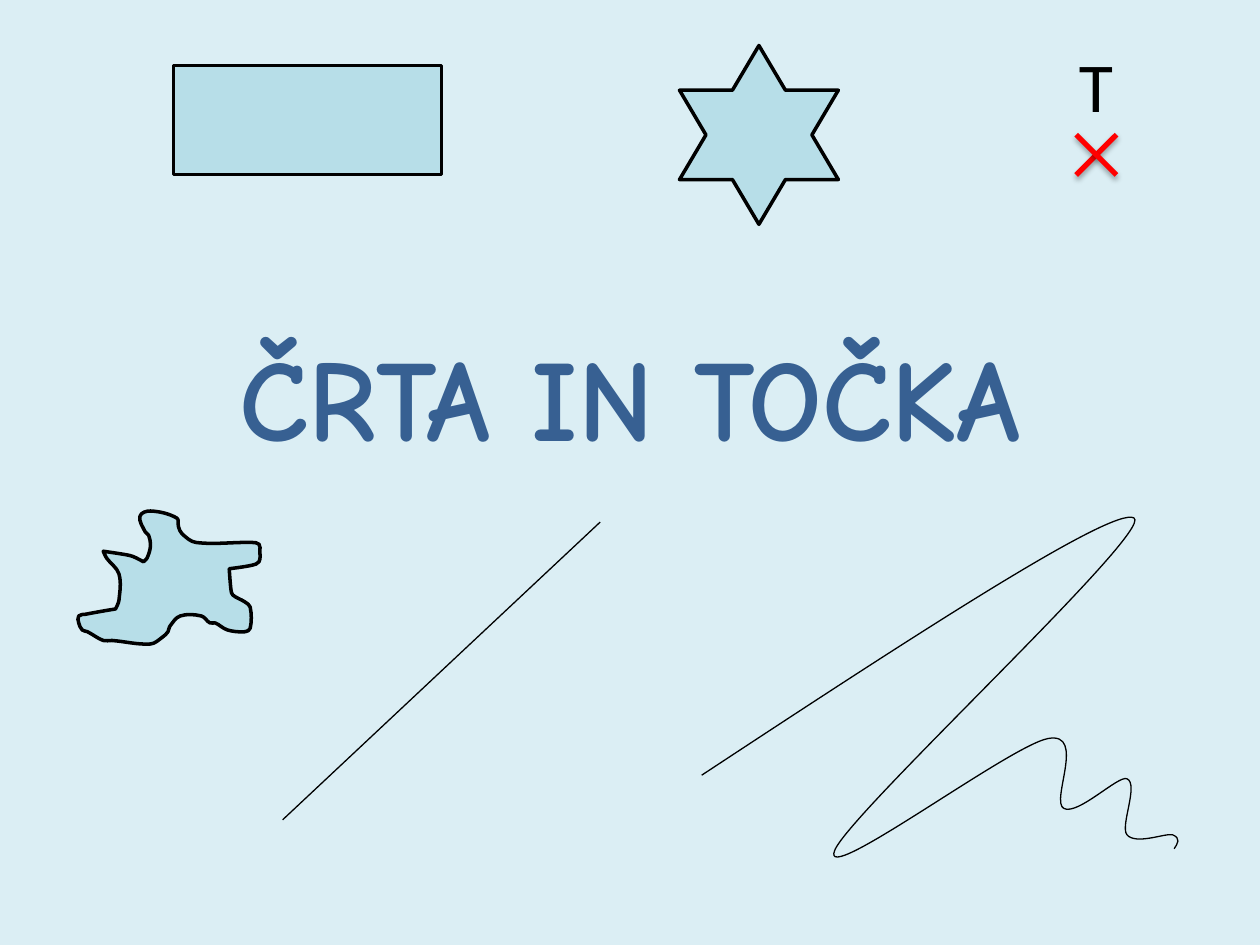
import math
from dataclasses import dataclass

import lxml.etree
import pptx
import pptx.dml.color
import pptx.enum.shapes
import pptx.enum.text
import pptx.oxml
import pptx.oxml.ns
import pptx.util

Pt = pptx.util.Pt
RGBColor = pptx.dml.color.RGBColor
Shapes = pptx.enum.shapes.MSO_SHAPE
Align = pptx.enum.text.PP_ALIGN
Anchor = pptx.enum.text.MSO_ANCHOR
AutoSize = pptx.enum.text.MSO_AUTO_SIZE
qn = pptx.oxml.ns.qn
Point = tuple[float, float]

PALE_BLUE = RGBColor(0xDB, 0xEE, 0xF4)
LIGHT_BLUE = RGBColor(0xB7, 0xDE, 0xE8)
TITLE_BLUE = RGBColor(0x37, 0x60, 0x92)
BLACK = RGBColor(0, 0, 0)
RED = RGBColor(0xFF, 0, 0)

NAMESPACE = 'xmlns:a="http://schemas.openxmlformats.org/drawingml/2006/main"'
NO_EFFECT = f"<a:effectLst {NAMESPACE}/>"
SOFT_SHADOW = (
    f'<a:effectLst {NAMESPACE}><a:outerShdw blurRad="{Pt(3.1)}" dist="{Pt(1.8)}" '
    'dir="5400000" rotWithShape="0"><a:srgbClr val="000000"><a:alpha val="35000"/>'
    "</a:srgbClr></a:outerShdw></a:effectLst>"
)


@dataclass
class Figure:
    kind: Shapes
    left: float
    top: float
    width: float
    height: float


@dataclass
class Line:
    start: Point
    end: Point
    color: RGBColor
    weight: float
    effect: str = NO_EFFECT


@dataclass
class Curve:
    """A start point, then two control points and an end point for each bend."""
    corner: Point
    opposite: Point
    controls: list[Point]
    weight: float
    fill: RGBColor | None = None


FIGURES = [
    Figure(Shapes.RECTANGLE, 99, 37.4, 153.2, 62.4),
    Figure(Shapes.STAR_6_POINT, 388.3, 26, 90.8, 102.2),
]
DIAGONAL = Line((161.5, 468.5), (343, 298.3), BLACK, 0.75)
CROSS = [
    Line((638, 77), (615, 100), RED, 3, SOFT_SHADOW),
    Line((615, 77), (638, 100), RED, 3, SOFT_SHADOW),
]
SQUIGGLE = Curve((401, 289), (674.7, 507.8), [
    (401, 443),
    (518, 366), (636, 289), (648, 296),
    (660, 303), (485, 465), (477, 486),
    (468, 508), (577, 426), (599, 422),
    (621, 418), (600, 458), (608, 462),
    (616, 466), (639, 443), (644, 445),
    (651, 448), (640, 472), (644, 477),
    (649, 483), (666, 476), (670, 477),
    (675, 479), (673, 482), (671, 485),
], 0.75)
BLOB_ANCHORS = [
    (83, 304), (80, 295), (86, 292), (101, 296), (102, 301), (104, 305),
    (112, 310), (144, 310), (148, 311), (148.5, 315), (148, 321), (144, 323),
    (131, 325), (132, 337), (133, 340), (140, 344), (143, 347), (143, 359),
    (140, 361), (130, 360), (123, 356), (120, 356), (115, 352), (103, 352),
    (97, 358), (96, 361), (93, 364), (86, 368), (64, 366), (59, 366),
    (50, 361), (47, 360), (45, 356), (45, 352), (49, 351), (60, 349),
    (66, 348), (68, 343), (68, 328), (61, 319), (59, 315), (72, 317),
    (76, 318), (82, 321), (84, 319), (86, 312), (85, 306),
]
BLOB_CORNERS = [(131, 325), (59, 315), (66, 348), (82, 321)]


def smooth_controls(anchors: list[Point], corners: list[Point]) -> list[Point]:
    """Return Bezier points for a closed curve, smooth except at the corners."""
    count = len(anchors)

    def handle(index: int, reach: float) -> Point:
        x, y = anchors[index]
        if anchors[index] in corners:
            return x, y
        before, after = anchors[index - 1], anchors[(index + 1) % count]
        scale = reach / math.dist(before, after)
        return x + (after[0] - before[0]) * scale, y + (after[1] - before[1]) * scale

    controls = [anchors[0]]
    for index, anchor in enumerate(anchors):
        following = (index + 1) % count
        reach = math.dist(anchor, anchors[following]) / 3
        controls += [handle(index, reach), handle(following, -reach), anchors[following]]
    return controls


def draw_curve(page, curve: Curve) -> None:
    left, top = curve.corner
    builder = page.shapes.build_freeform(Pt(left), Pt(top))
    builder.add_line_segments([tuple(map(Pt, curve.opposite))], close=False)
    shape = builder.convert_to_shape()
    outline = next(shape._element.iter(qn("a:path")))
    for command in list(outline):
        outline.remove(command)

    def add_command(name: str, points: list[Point]) -> None:
        command = lxml.etree.SubElement(outline, qn(name))
        for x, y in points:
            lxml.etree.SubElement(
                command, qn("a:pt"), x=str(int(Pt(x - left))), y=str(int(Pt(y - top)))
            )

    add_command("a:moveTo", curve.controls[:1])
    for first in range(1, len(curve.controls), 3):
        add_command("a:cubicBezTo", curve.controls[first:first + 3])
    if curve.controls[0] == curve.controls[-1]:
        add_command("a:close", [])
    style_shape(shape, weight=curve.weight, fill=curve.fill)


def style_shape(shape, *, weight: float, fill: RGBColor | None = None) -> None:
    shape.shadow.inherit = False
    shape.line.color.rgb = BLACK
    shape.line.width = Pt(weight)
    if fill is None:
        shape.fill.background()
    else:
        shape.fill.solid()
        shape.fill.fore_color.rgb = fill


def draw_figure(page, figure: Figure) -> None:
    shape = page.shapes.add_shape(
        figure.kind, Pt(figure.left), Pt(figure.top), Pt(figure.width), Pt(figure.height)
    )
    style_shape(shape, weight=2, fill=LIGHT_BLUE)


def draw_line(page, line: Line) -> None:
    connector = page.shapes.add_connector(
        pptx.enum.shapes.MSO_CONNECTOR.STRAIGHT, *map(Pt, line.start + line.end)
    )
    connector.line.color.rgb = line.color
    connector.line.width = Pt(line.weight)
    connector._element.spPr.append(pptx.oxml.parse_xml(line.effect))


def write_text(box, text: str, *, font: str, size: float, color: RGBColor,
               bold: bool = False, align=Align.LEFT, anchor=Anchor.TOP,
               wrap: bool = True, fit=AutoSize.NONE, bottom: float = 3.6) -> None:
    frame = box.text_frame
    frame.word_wrap = wrap
    frame.auto_size = fit
    frame.vertical_anchor = anchor
    frame.margin_bottom = Pt(bottom)
    para = frame.paragraphs[0]
    para.alignment = align
    span = para.add_run()
    span.text = text
    span.font.name = font
    span.font.size = Pt(size)
    span.font.bold = bold
    span.font.color.rgb = color


def main() -> None:
    deck = pptx.Presentation()
    deck.slide_width, deck.slide_height = Pt(720), Pt(540)
    page = deck.slides.add_slide(deck.slide_layouts[0])
    page.background.fill.solid()
    page.background.fill.fore_color.rgb = PALE_BLUE
    subtitle = page.placeholders[1]._element
    subtitle.getparent().remove(subtitle)

    title = page.shapes.title
    title.left, title.top, title.width, title.height = map(Pt, (54, 167.75, 612, 115.75))
    write_text(title, "ČRTA IN TOČKA", font="Comic Neue", size=66, color=TITLE_BLUE,
               bold=True, align=Align.CENTER, anchor=Anchor.MIDDLE)

    draw_line(page, DIAGONAL)
    draw_curve(page, SQUIGGLE)
    for figure in FIGURES:
        draw_figure(page, figure)
    for line in CROSS:
        draw_line(page, line)

    point_label = page.shapes.add_textbox(Pt(609.4), Pt(21), Pt(34), Pt(57))
    write_text(point_label, "T", font="Calibri", size=40, color=BLACK,
               wrap=False, fit=AutoSize.SHAPE_TO_FIT_TEXT)

    blob_controls = smooth_controls(BLOB_ANCHORS, BLOB_CORNERS)
    draw_curve(page, Curve((44, 292), (148.5, 368), blob_controls, 2, LIGHT_BLUE))

    deck.save("out.pptx")


if __name__ == "__main__":
    main()
